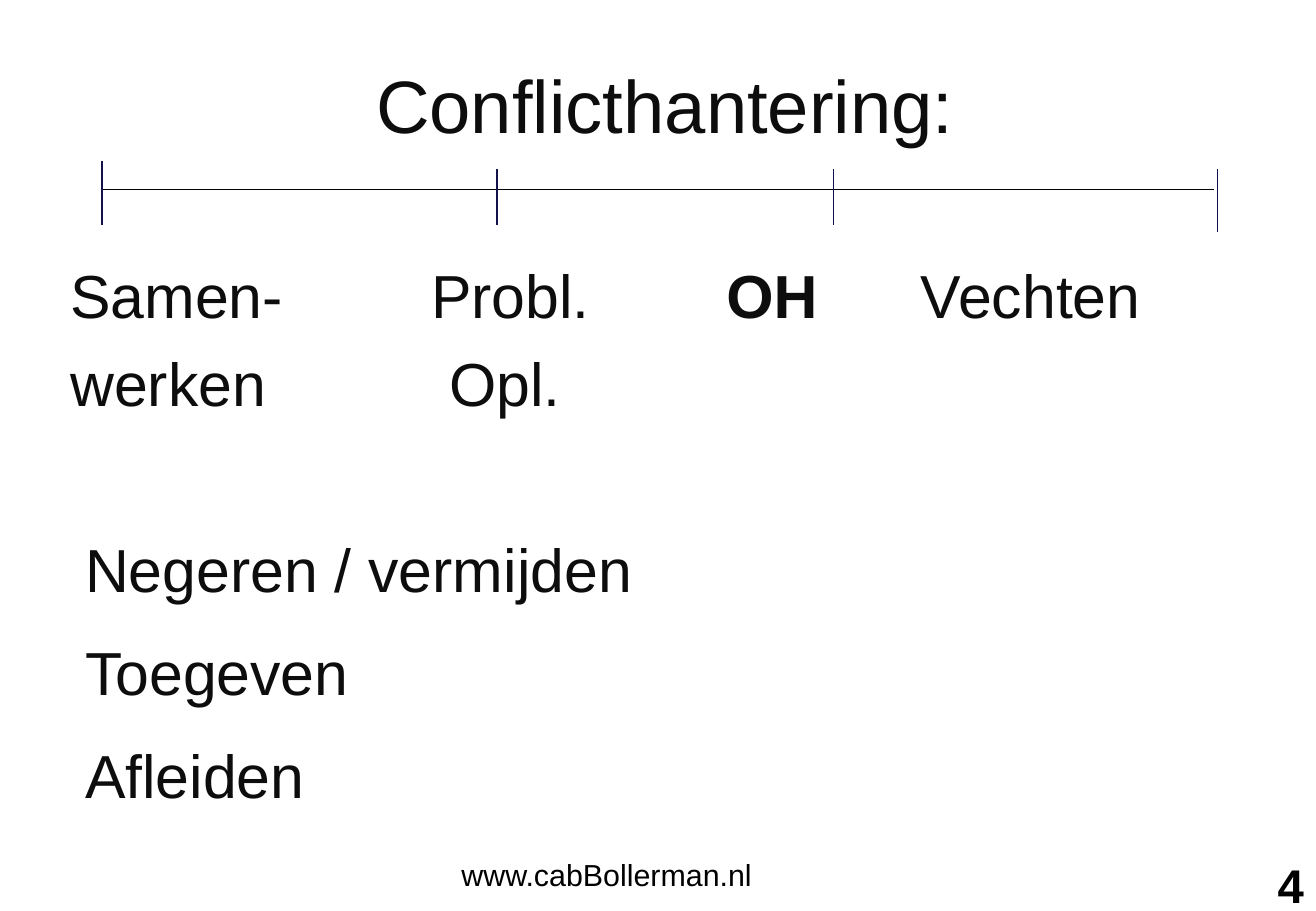
from dataclasses import dataclass

import lxml.etree
import pptx
import pptx.dml.color
import pptx.enum.shapes
import pptx.enum.text
import pptx.oxml.ns
import pptx.shapes.base
import pptx.slide
import pptx.text.text
import pptx.util

BLACK = pptx.dml.color.RGBColor(0x00, 0x00, 0x00)
INK = pptx.dml.color.RGBColor(0x0D, 0x0D, 0x0D)
NAVY = pptx.dml.color.RGBColor(0x13, 0x12, 0x4D)
FONT = "Arial"
LEFT = pptx.enum.text.PP_ALIGN.LEFT
CENTER = pptx.enum.text.PP_ALIGN.CENTER
RIGHT = pptx.enum.text.PP_ALIGN.RIGHT

SLIDE_WIDTH = pptx.util.Inches(10.83)
SLIDE_HEIGHT = pptx.util.Inches(7.5)
TITLE_AND_CONTENT_LAYOUT = 1
PARAGRAPH_GAP = 17.8


@dataclass(frozen=True)
class Area:
    """A rectangle in percent of the slide's width and height."""
    left: float
    top: float
    width: float
    height: float


@dataclass(frozen=True)
class Line:
    """A straight line in percent of the slide's width and height."""
    x1: float
    y1: float
    x2: float
    y2: float
    color: pptx.dml.color.RGBColor = NAVY


@dataclass(frozen=True)
class Row:
    """One paragraph; text before and after a bold word, with tab stops."""
    text: str
    bold_word: str = ""
    rest: str = ""
    tabs: tuple[float, ...] = ()


@dataclass(frozen=True)
class Block:
    area: Area
    rows: tuple[Row, ...]
    size: int
    color: pptx.dml.color.RGBColor = INK
    align: pptx.enum.text.PP_ALIGN = LEFT
    bold: bool = False
    line_spacing: float = 1.0


TITLE = Block(Area(6.65, 5.87, 87.81, 11.2), (Row("Conflicthantering:"),), 44,
              align=CENTER)
SCALE_LABELS = Block(
    Area(4.43, 29.2, 99.17, 18.53),
    (Row("Samen-\tProbl.\t", "OH", "\tVechten", (27.42, 49.86, 64.64)),
     Row("werken\tOpl.", tabs=(28.8,))),
    36, line_spacing=0.8)
STRATEGIES = Block(
    Area(5.54, 57.73, 81.16, 33.33),
    (Row("Negeren / vermijden"), Row("Toegeven"), Row("Afleiden")), 36)
FOOTER = Block(Area(34.16, 93.33, 31.67, 7.6),
               (Row("www.cabBollerman.nl"),), 18, BLACK)
PAGE_NUMBER = Block(Area(79.22, 93.33, 20.78, 6.67), (Row("4"),), 28, BLACK,
                    RIGHT, bold=True)

SCALE_LINES = (
    Line(7.76, 20.8, 92.24, 20.8, BLACK),
    Line(7.76, 17.73, 7.76, 24.67),
    Line(92.52, 18.53, 92.52, 25.47),
    Line(37.77, 18.53, 37.77, 24.67),
    Line(63.34, 18.53, 63.34, 24.67),
)


def across(percent: float) -> int:
    return round(SLIDE_WIDTH * percent / 100)


def down(percent: float) -> int:
    return round(SLIDE_HEIGHT * percent / 100)


def remove_bullet(para: pptx.text.text._Paragraph) -> None:
    properties = para._p.get_or_add_pPr()
    properties.set("marL", "0")
    properties.set("indent", "0")
    lxml.etree.SubElement(properties, pptx.oxml.ns.qn("a:buNone"))


def add_tabs(para: pptx.text.text._Paragraph, tabs: tuple[float, ...]) -> None:
    """Add left tab stops, in percent of the slide's width."""
    tab_list = lxml.etree.SubElement(para._p.get_or_add_pPr(),
                                     pptx.oxml.ns.qn("a:tabLst"))
    for position in tabs:
        lxml.etree.SubElement(tab_list, pptx.oxml.ns.qn("a:tab"),
                              pos=str(across(position)), algn="l")


def fill_box(box: pptx.shapes.base.BaseShape, block: Block) -> None:
    """Place a placeholder or text box and write its paragraphs."""
    area = block.area
    box.left, box.top = across(area.left), down(area.top)
    box.width, box.height = across(area.width), down(area.height)
    frame = box.text_frame
    frame.word_wrap = True
    frame.auto_size = pptx.enum.text.MSO_AUTO_SIZE.NONE
    frame.vertical_anchor = pptx.enum.text.MSO_ANCHOR.TOP
    frame.margin_left = frame.margin_right = pptx.util.Inches(0.1)
    frame.margin_top = frame.margin_bottom = pptx.util.Inches(0.05)
    for index, row in enumerate(block.rows):
        para = frame.paragraphs[0] if index == 0 else frame.add_paragraph()
        if box.is_placeholder:
            remove_bullet(para)
        if row.tabs:
            add_tabs(para, row.tabs)
        para.alignment = block.align
        para.line_spacing = block.line_spacing
        para.space_before = pptx.util.Pt(PARAGRAPH_GAP if index else 0)
        para.font.name = FONT
        para.font.size = pptx.util.Pt(block.size)
        para.font.bold = block.bold
        para.font.color.rgb = block.color
        para.add_run().text = row.text
        if row.bold_word:
            span = para.add_run()
            span.text = row.bold_word
            span.font.bold = True
            para.add_run().text = row.rest


def add_text(page: pptx.slide.Slide, block: Block) -> None:
    fill_box(page.shapes.add_textbox(0, 0, 0, 0), block)


def add_line(page: pptx.slide.Slide, line: Line) -> None:
    connector = page.shapes.add_connector(
        pptx.enum.shapes.MSO_CONNECTOR.STRAIGHT,
        across(line.x1), down(line.y1), across(line.x2), down(line.y2))
    connector.line.color.rgb = line.color
    connector.line.width = pptx.util.Pt(1)
    lxml.etree.SubElement(connector._element.spPr, pptx.oxml.ns.qn("a:effectLst"))


def main() -> None:
    deck = pptx.Presentation()
    deck.slide_width, deck.slide_height = SLIDE_WIDTH, SLIDE_HEIGHT
    page = deck.slides.add_slide(deck.slide_layouts[TITLE_AND_CONTENT_LAYOUT])
    title, strategies = page.placeholders
    fill_box(title, TITLE)
    for line in SCALE_LINES:
        add_line(page, line)
    add_text(page, SCALE_LABELS)
    fill_box(strategies, STRATEGIES)
    add_text(page, FOOTER)
    add_text(page, PAGE_NUMBER)
    deck.save("out.pptx")


if __name__ == "__main__":
    main()
